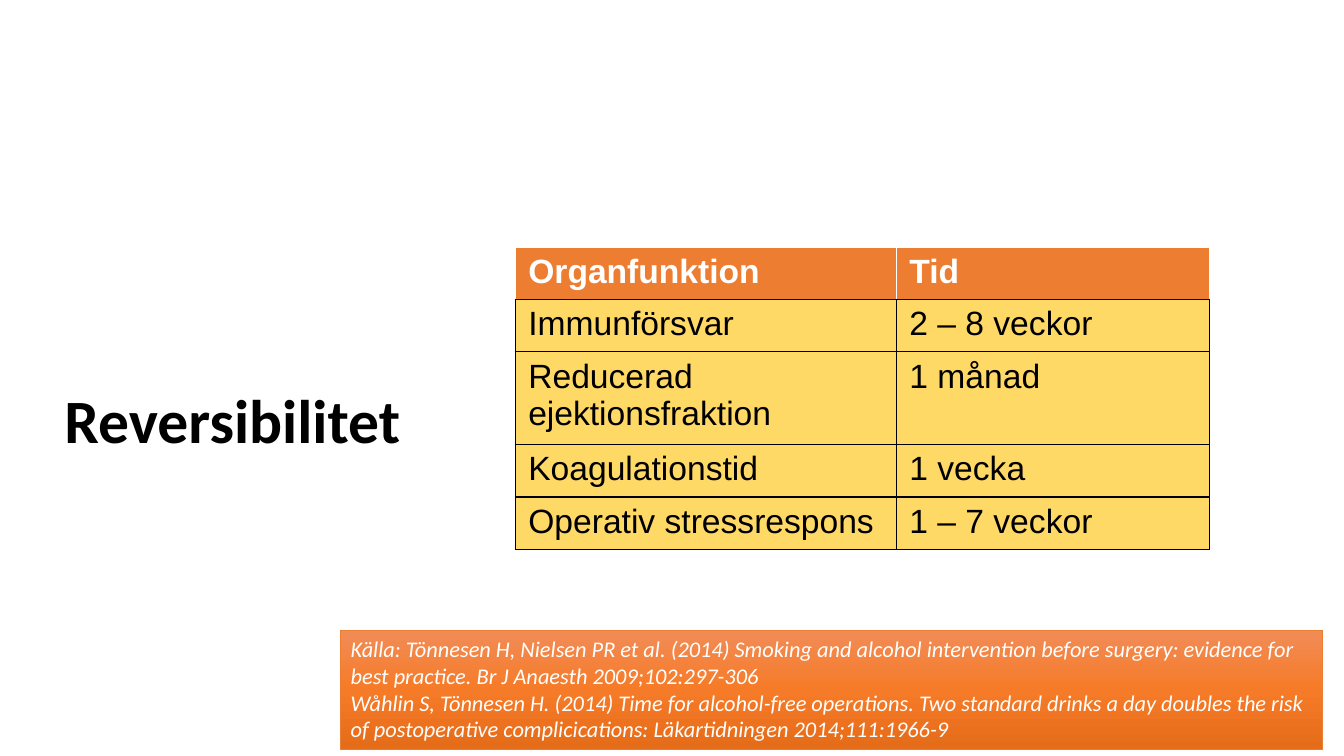
import copy
from dataclasses import dataclass

import lxml.etree
import pptx
import pptx.dml.color
import pptx.enum.shapes
import pptx.enum.text
import pptx.oxml.ns
import pptx.util

Inches = pptx.util.Inches
Pt = pptx.util.Pt
qn = pptx.oxml.ns.qn


@dataclass(frozen=True)
class Theme:
    black: str = "000000"
    white: str = "FFFFFF"
    orange: str = "ED7D31"
    yellow: str = "FFD966"
    gradient: tuple = ((0, "F18C57"), (0.5, "F67B28"), (1, "E56C19"))
    heading_font: str = "Calibri"
    table_font: str = "Arial"
    title_size: int = 44
    table_size: int = 24
    source_size: int = 16


THEME = Theme()

RECOVERY_TIMES = (
    ("Organfunktion", "Tid"),
    ("Immunförsvar", "2 – 8 veckor"),
    ("Reducerad ejektionsfraktion", "1 månad"),
    ("Koagulationstid", "1 vecka"),
    ("Operativ stressrespons", "1 – 7 veckor"),
)
COLUMN_WIDTHS = (3.78, 3.11)
ROW_HEIGHTS = (0.49, 0.49, 0.88, 0.49, 0.47)

SOURCES = (
    "Källa: Tönnesen H, Nielsen PR et al. (2014) Smoking and alcohol intervention "
    "before surgery: evidence for best practice. Br J Anaesth 2009;102:297-306",
    "Wåhlin S, Tönnesen H. (2014) Time for alcohol-free operations. Two standard drinks "
    "a day doubles the risk of postoperative complicications: Läkartidningen 2014;111:1966-9",
)


def rgb(color):
    return pptx.dml.color.RGBColor.from_string(color)


def add_run(paragraph, text, font, size, color, bold=False, italic=False):
    paragraph.alignment = pptx.enum.text.PP_ALIGN.LEFT
    run = paragraph.add_run()
    run.text = text
    run.font.name = font
    run.font.size = Pt(size)
    run.font.color.rgb = rgb(color)
    run.font.bold = bold
    run.font.italic = italic


def add_title(slide, text):
    title = slide.shapes.add_textbox(Inches(0.54), Inches(3.82), Inches(7.75), Inches(1.51))
    title.text_frame.word_wrap = True
    paragraph = title.text_frame.paragraphs[0]
    paragraph.line_spacing = 0.9
    add_run(paragraph, text, THEME.heading_font, THEME.title_size, THEME.black, bold=True)


def set_borders(cell, colors):
    """Draw 1 pt cell borders; colors maps L, R, T and B, in that order."""
    properties = cell._tc.get_or_add_tcPr()
    for side, color in colors.items():
        line = lxml.etree.SubElement(properties, qn(f"a:ln{side}"), w=str(Pt(1)))
        fill = lxml.etree.SubElement(line, qn("a:solidFill"))
        lxml.etree.SubElement(fill, qn("a:srgbClr"), val=color)


def style_cell(cell, text, is_header):
    cell.margin_left = cell.margin_right = Inches(0.13)
    cell.margin_top = cell.margin_bottom = Inches(0.06)
    edge = THEME.white if is_header else THEME.black
    set_borders(cell, {"L": edge, "R": edge, "T": edge, "B": THEME.black})
    cell.fill.solid()
    cell.fill.fore_color.rgb = rgb(THEME.orange if is_header else THEME.yellow)
    add_run(cell.text_frame.paragraphs[0], text, THEME.table_font, THEME.table_size,
            edge, bold=is_header)


def add_recovery_table(slide):
    table = slide.shapes.add_table(
        len(RECOVERY_TIMES), len(COLUMN_WIDTHS), Inches(5.11), Inches(2.45),
        Inches(sum(COLUMN_WIDTHS)), Inches(sum(ROW_HEIGHTS))).table
    table.horz_banding = False
    for column, width in zip(table.columns, COLUMN_WIDTHS):
        column.width = Inches(width)
    for index, (row, height, texts) in enumerate(zip(table.rows, ROW_HEIGHTS, RECOVERY_TIMES)):
        row.height = Inches(height)
        for cell, text in zip(row.cells, texts):
            style_cell(cell, text, is_header=index == 0)


def fill_gradient(shape, stops):
    """Fill from top to bottom with (position, color) stops."""
    shape.fill.gradient()
    shape.fill.gradient_angle = 270
    stop_list = shape._element.spPr.find(qn("a:gradFill")).find(qn("a:gsLst"))
    while len(stop_list) < len(stops):
        stop_list.append(copy.deepcopy(stop_list[0]))
    for stop, (position, color) in zip(shape.fill.gradient_stops, stops):
        stop.position = position
        stop.color.rgb = rgb(color)


def add_source_panel(slide):
    panel = slide.shapes.add_shape(
        pptx.enum.shapes.MSO_SHAPE.RECTANGLE,
        Inches(3.38), Inches(6.25), Inches(9.74), Inches(1.18))
    panel.shadow.inherit = False
    fill_gradient(panel, THEME.gradient)
    panel.line.color.rgb = rgb(THEME.orange)
    panel.line.width = Pt(0.5)
    frame = panel.text_frame
    frame.word_wrap = True
    frame.auto_size = pptx.enum.text.MSO_AUTO_SIZE.SHAPE_TO_FIT_TEXT
    frame.vertical_anchor = pptx.enum.text.MSO_ANCHOR.TOP
    for index, source in enumerate(SOURCES):
        paragraph = frame.add_paragraph() if index else frame.paragraphs[0]
        add_run(paragraph, source, THEME.heading_font, THEME.source_size, THEME.white, italic=True)


def main():
    presentation = pptx.Presentation()
    presentation.slide_width = Inches(13.33)
    presentation.slide_height = Inches(7.5)
    slide = presentation.slides.add_slide(presentation.slide_layouts[6])
    add_title(slide, "Reversibilitet")
    add_recovery_table(slide)
    add_source_panel(slide)
    presentation.save("out.pptx")


if __name__ == "__main__":
    main()
